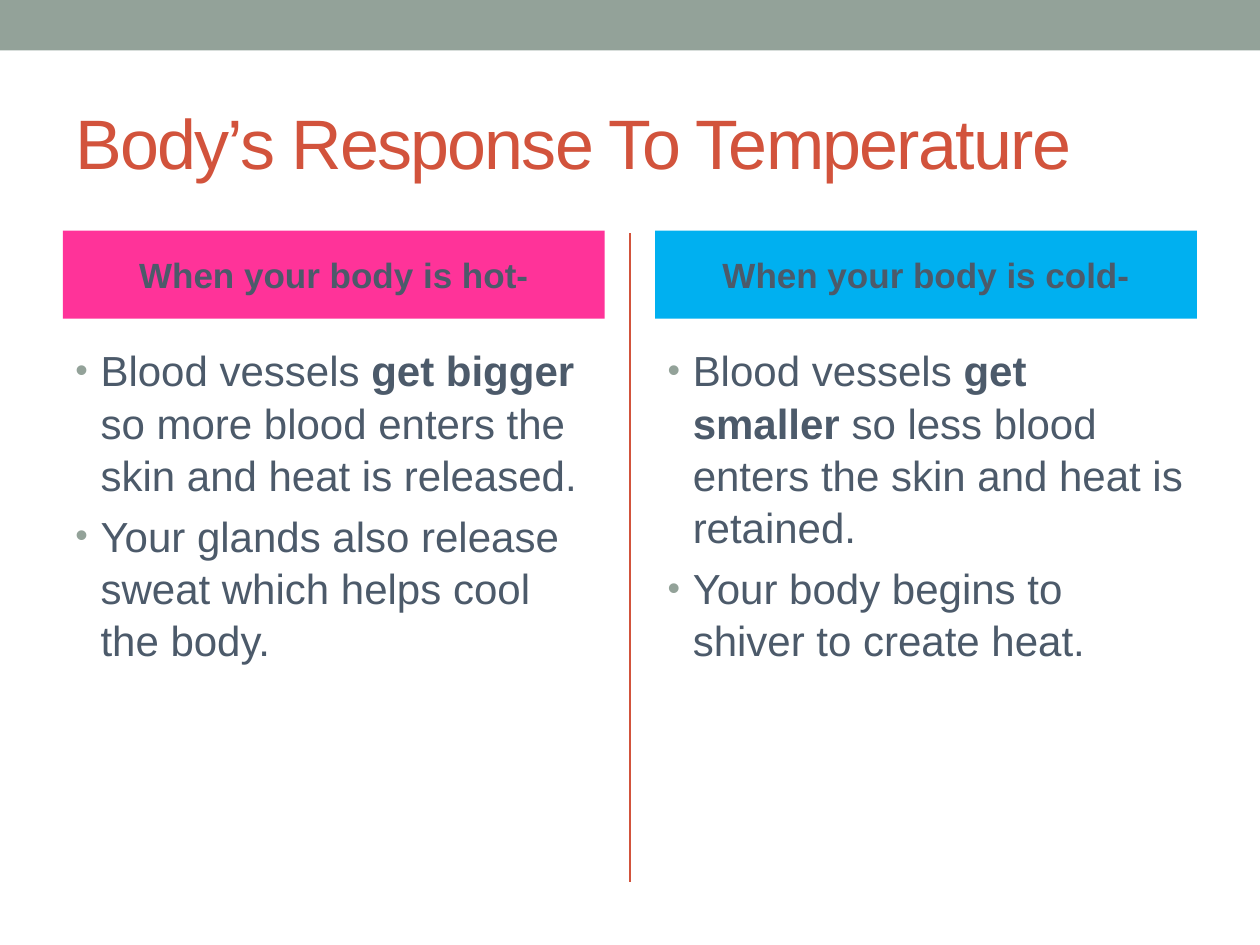
from lxml.etree import SubElement
from pptx import Presentation
from pptx.dml.color import RGBColor
from pptx.enum.shapes import MSO_CONNECTOR as LINE, MSO_SHAPE as SHAPE
from pptx.enum.text import MSO_ANCHOR as ANCHOR, PP_ALIGN as ALIGN
from pptx.oxml.ns import qn
from pptx.util import Inches, Pt

SAGE = RGBColor(0x93, 0xA2, 0x99)
RUST = RGBColor(0xD2, 0x53, 0x3C)
SLATE = RGBColor(0x4C, 0x5A, 0x6A)
PINK = RGBColor(0xFF, 0x33, 0x99)
BLUE = RGBColor(0x00, 0xB0, 0xF0)
FONT = "Arial"

TITLE = "Body’s Response To Temperature"
# Each side: heading, fill, points; a point is a list of (text, bold) runs
SIDES = [
    ("When your body is hot-", PINK, [
        [("Blood vessels ", False), ("get bigger ", True),
         ("so more blood enters the skin and heat is released.", False)],
        [("Your glands also release sweat which helps cool the body.", False)],
    ]),
    ("When your body is cold-", BLUE, [
        [("Blood vessels ", False), ("get smaller ", True),
         ("so less blood enters the skin and heat is retained.", False)],
        [("Your body begins to shiver to create heat.", False)],
    ]),
]

WIDE, HIGH = 10, 7.5
EDGE, GAP = 0.5, 0.4
COL = (WIDE - 2 * EDGE - GAP) / 2
HEAD_TOP, HEAD_HIGH = 1.83, 0.7
LIST_TOP, LIST_HIGH = 2.67, 4.32
HANG = Inches(0.2)


def style(run, size, color, bold=False):
    font = run.font
    font.name, font.size, font.bold = FONT, Pt(size), bold
    font.color.rgb = color


def add_rect(slide, box, fill):
    rect = slide.shapes.add_shape(SHAPE.RECTANGLE, *map(Inches, box))
    rect.shadow.inherit = False
    rect.fill.solid()
    rect.fill.fore_color.rgb = fill
    rect.line.fill.background()
    return rect


def add_frame(slide, box):
    frame = slide.shapes.add_textbox(*map(Inches, box)).text_frame
    frame.word_wrap = True
    return frame


def add_bullet(para):
    props = para._p.get_or_add_pPr()
    props.set("marL", str(HANG))
    props.set("indent", str(-HANG))
    color = SubElement(props, qn("a:buClr"))
    SubElement(color, qn("a:srgbClr"), val=str(SAGE))
    SubElement(props, qn("a:buSzPct"), val="85000")
    SubElement(props, qn("a:buFont"), typeface=FONT)
    SubElement(props, qn("a:buChar"), char="•")


def add_title(slide):
    frame = add_frame(slide, (EDGE, 0.58, WIDE - 2 * EDGE, 1.08))
    frame.vertical_anchor = ANCHOR.MIDDLE
    frame.text = TITLE
    run = frame.paragraphs[0].runs[0]
    style(run, 40, RUST)
    run.font._element.set("spc", "-100")


def add_divider(slide):
    mid = Inches(WIDE / 2)
    line = slide.shapes.add_connector(
        LINE.STRAIGHT, mid, Inches(1.85), mid, Inches(7))
    line.line.color.rgb = RUST
    line.line.width = Pt(1.5)
    SubElement(line._element.spPr, qn("a:effectLst"))


def add_heading(slide, left, text, fill):
    rect = add_rect(slide, (left, HEAD_TOP, COL, HEAD_HIGH), fill)
    frame = rect.text_frame
    frame.word_wrap = True
    frame.vertical_anchor = ANCHOR.MIDDLE
    frame.text = text
    para = frame.paragraphs[0]
    para.alignment = ALIGN.CENTER
    style(para.runs[0], 20, SLATE, True)


def add_points(slide, left, points):
    frame = add_frame(slide, (left, LIST_TOP, COL, LIST_HIGH))
    for i, runs in enumerate(points):
        para = frame.add_paragraph() if i else frame.paragraphs[0]
        para.space_before = Pt(4.8)
        para.line_spacing = 1.04
        add_bullet(para)
        for text, bold in runs:
            run = para.add_run()
            run.text = text
            style(run, 24, SLATE, bold)


def main():
    deck = Presentation()
    deck.slide_width, deck.slide_height = Inches(WIDE), Inches(HIGH)
    slide = deck.slides.add_slide(deck.slide_layouts[6])
    add_rect(slide, (0, 0, WIDE, 0.4), SAGE)
    add_divider(slide)
    add_title(slide)
    for i, (head, fill, points) in enumerate(SIDES):
        left = EDGE + i * (COL + GAP)
        add_points(slide, left, points)
        add_heading(slide, left, head, fill)
    deck.save("out.pptx")


if __name__ == "__main__":
    main()
